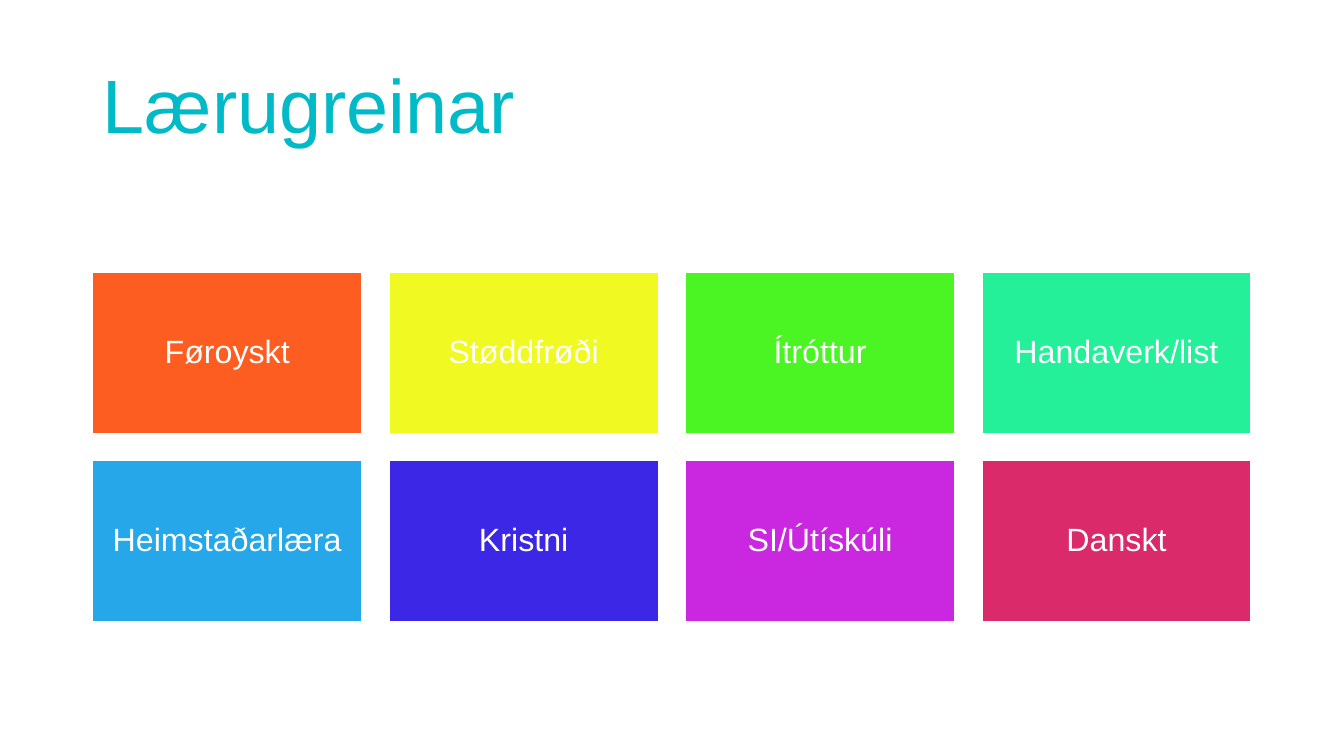
from pptx import Presentation
from pptx.dml.color import RGBColor
from pptx.enum.shapes import MSO_SHAPE as Preset
from pptx.enum.text import MSO_ANCHOR as Anchor, MSO_AUTO_SIZE as AutoSize, PP_ALIGN as Align
from pptx.util import Inches, Pt

TITLE = "Lærugreinar"
SUBJECTS = [
    ("Føroyskt", "FE5D21"),
    ("Støddfrøði", "F1F922"),
    ("Ítróttur", "4BF523"),
    ("Handaverk/list", "24F099"),
    ("Heimstaðarlæra", "25A7EA"),
    ("Kristni", "3B27E5"),
    ("SI/Útískúli", "C928E0"),
    ("Danskt", "DA2A69"),
]
WHITE, TURQUOISE = "FFFFFF", "00BAC8"
COLUMNS = 4
LEFT, TOP = 0.92, 2.7
TILE_WIDTH, TILE_HEIGHT, GAP = 2.67, 1.6, 0.27


def color(value):
    return RGBColor.from_string(value)


def write(shape, text, size, hex_color, align, anchor):
    frame = shape.text_frame
    frame.text = text
    frame.word_wrap = True
    frame.auto_size = AutoSize.NONE
    frame.vertical_anchor = anchor
    paragraph = frame.paragraphs[0]
    paragraph.alignment = align
    paragraph.line_spacing = 0.9
    font = paragraph.runs[0].font
    font.name = "Arial"
    font.size = Pt(size)
    font.color.rgb = color(hex_color)
    return frame


def add_tile(slide, index, subject, fill):
    row, column = divmod(index, COLUMNS)
    tile = slide.shapes.add_shape(
        Preset.RECTANGLE,
        Inches(LEFT + column * (TILE_WIDTH + GAP)),
        Inches(TOP + row * (TILE_HEIGHT + GAP)),
        Inches(TILE_WIDTH),
        Inches(TILE_HEIGHT),
    )
    tile.shadow.inherit = False
    tile.fill.solid()
    tile.fill.fore_color.rgb = color(fill)
    tile.line.color.rgb = color(WHITE)
    tile.line.width = Pt(1)
    frame = write(tile, subject, 23, WHITE, Align.CENTER, Anchor.MIDDLE)
    frame.margin_left = frame.margin_right = Inches(0.1)
    frame.margin_top = frame.margin_bottom = Inches(0.1)


def main():
    presentation = Presentation()
    presentation.slide_width = Inches(13.33)
    presentation.slide_height = Inches(7.5)
    slide = presentation.slides.add_slide(presentation.slide_layouts[5])
    title = slide.shapes.title
    title.left, title.top = Inches(LEFT), Inches(0.4)
    title.width, title.height = Inches(11.67), Inches(1.14)
    write(title, TITLE, 54, TURQUOISE, Align.LEFT, Anchor.BOTTOM)
    for index, (subject, fill) in enumerate(SUBJECTS):
        add_tile(slide, index, subject, fill)
    presentation.save("out.pptx")


if __name__ == "__main__":
    main()
